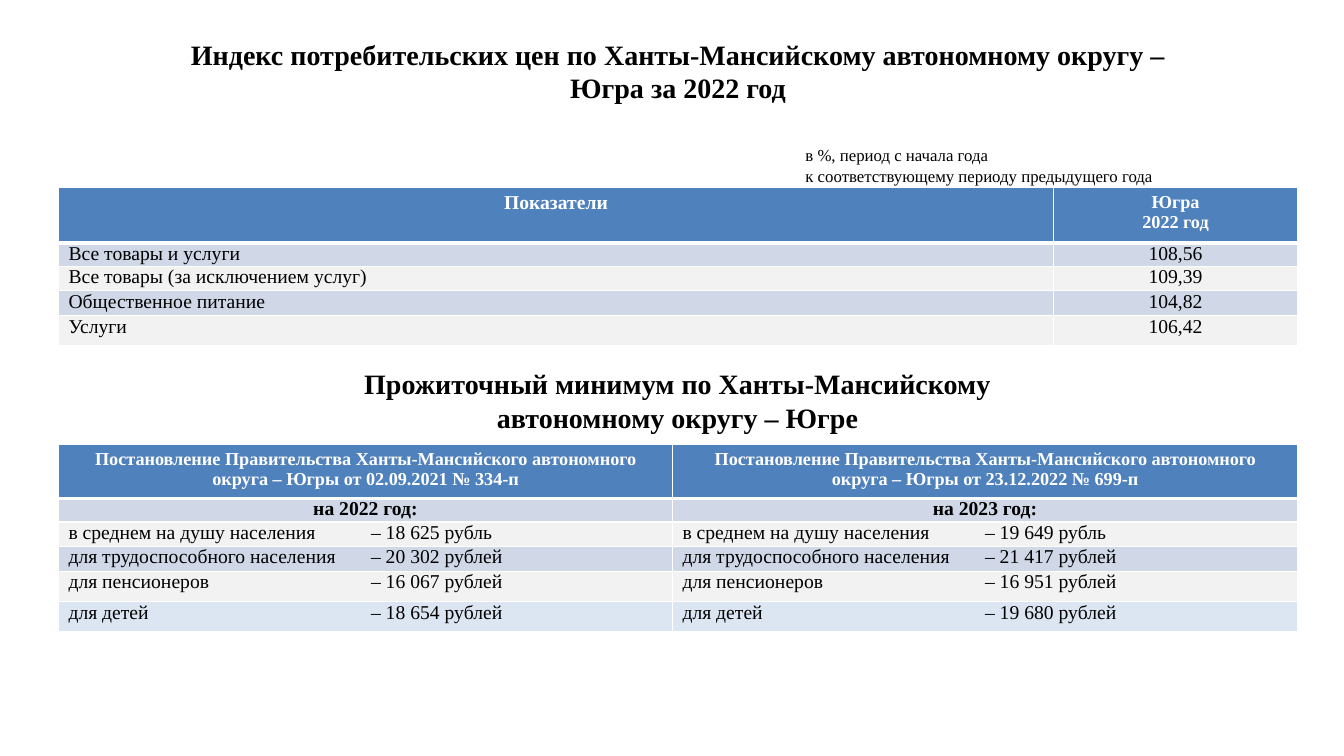
import pptx
import pptx.util
import pptx.dml.color
import pptx.enum.text
import lxml.etree
from pptx.util import Inches

FONT = "Times New Roman"
COLORS = {"text": "000000", "white": "FFFFFF", "header": "4F81BD",
          "band": "D0D8E8", "plain": "F2F2F2", "children": "DCE6F2"}
ALIGN = pptx.enum.text.PP_ALIGN
NS = "http://schemas.openxmlformats.org/drawingml/2006/main"


def rgb(name):
    return pptx.dml.color.RGBColor.from_string(COLORS[name])


def sub(parent, tag, **attrs):
    return lxml.etree.SubElement(parent, f"{{{NS}}}{tag}", attrs)


def write(tf, text, size=14, color="text", bold=False, align=ALIGN.LEFT, indent=0, tab=0):
    for i, line in enumerate(text.split("\n")):
        p = tf.add_paragraph() if i else tf.paragraphs[0]
        p.alignment = align
        pPr = p._p.get_or_add_pPr()
        if indent:
            pPr.set("indent", str(Inches(indent)))
        if tab:
            sub(sub(pPr, "tabLst"), "tab", pos=str(Inches(tab)), algn="l")
        r = p.add_run()
        r.text = line
        r.font.name = FONT
        r.font.size = pptx.util.Pt(size)
        r.font.bold = bold
        r.font.color.rgb = rgb(color)


def add_text(s, box, text, **fmt):
    tf = s.shapes.add_textbox(*map(Inches, box)).text_frame
    tf.word_wrap = True
    tf.auto_size = pptx.enum.text.MSO_AUTO_SIZE.SHAPE_TO_FIT_TEXT
    write(tf, text, **fmt)


def add_borders(cell, top, bottom):
    tcPr = cell._tc.get_or_add_tcPr()
    for side, width in (("L", 1), ("R", 1), ("T", top), ("B", bottom)):
        ln = sub(tcPr, f"ln{side}", w=str(pptx.util.Pt(width)))
        sub(sub(ln, "solidFill"), "srgbClr", val=COLORS["white"])


def fill_cell(cell, text, row, fill, **fmt):
    add_borders(cell, top=3 if row == 1 else 1, bottom=3 if row == 0 else 1)
    cell.fill.solid()
    cell.fill.fore_color.rgb = rgb(fill)
    cell.margin_left = cell.margin_right = Inches(0.1 if row else 0.13)
    cell.margin_top = cell.margin_bottom = Inches(0 if row else 0.05)
    write(cell.text_frame, text, **fmt)


def add_table(s, top, widths, heights, rows, fills, cell_format):
    table = s.shapes.add_table(len(rows), len(widths), Inches(0.58), Inches(top),
                               Inches(sum(widths)), Inches(sum(heights))).table
    for column, width in zip(table.columns, widths):
        column.width = Inches(width)
    for i, (values, height, fill) in enumerate(zip(rows, heights, fills)):
        table.rows[i].height = Inches(height)
        for j, text in enumerate(values):
            fill_cell(table.cell(i, j), text, i, fill, **cell_format(i, j))


def price_format(i, j):
    if i == 0:
        return dict(size=13 if j else 14, color="white", bold=True, align=ALIGN.CENTER)
    return dict(align=ALIGN.CENTER if j else ALIGN.JUSTIFY)


def minimum_format(i, j):
    if i == 0:
        return dict(size=13, color="white", bold=True, align=ALIGN.CENTER)
    if i == 1:
        return dict(bold=True, align=ALIGN.CENTER)
    return dict(align=ALIGN.JUSTIFY, tab=3)


def main():
    prs = pptx.Presentation()
    prs.slide_width, prs.slide_height = Inches(13.33), Inches(7.5)
    s = prs.slides.add_slide(prs.slide_layouts[6])
    title = dict(size=20, bold=True, align=ALIGN.CENTER)
    add_text(s, (0.54, 3.59, 12.36, 0.77),
             "Прожиточный минимум по Ханты-Мансийскому\nавтономному округу – Югре", **title)
    add_text(s, (1.58, 0.32, 10.29, 0.77),
             "Индекс потребительских цен по Ханты-Мансийскому автономному округу – Югра за 2022 год",
             **title)
    add_text(s, (7.4, 1.39, 5.67, 0.71),
             "в %, период с начала года\nк соответствующему периоду предыдущего года",
             size=12, indent=0.49)

    fills = ["header", "band", "plain", "band", "plain", "children"]
    prices = [("Показатели", "Югра\n2022 год"),
              ("Все товары и услуги", "108,56"),
              ("Все товары (за исключением услуг)", "109,39"),
              ("Общественное питание", "104,82"),
              ("Услуги", "106,42")]
    add_table(s, 1.86, [9.87, 2.42], [0.55, 0.23, 0.24, 0.25, 0.3],
              prices, fills, price_format)

    decree = "Постановление Правительства Ханты-Мансийского автономного округа – Югры от "
    minimums = [("в среднем на душу населения", "18 625 рубль", "19 649 рубль"),
                ("для трудоспособного населения", "20 302 рублей", "21 417 рублей"),
                ("для пенсионеров", "16 067 рублей", "16 951 рублей"),
                ("для детей", "18 654 рублей", "19 680 рублей")]
    rows = [(decree + "02.09.2021 № 334-п", decree + "23.12.2022 № 699-п"),
            ("на 2022 год:", "на 2023 год:")]
    rows += [[f"{group}\t– {amount}" for amount in amounts] for group, *amounts in minimums]
    add_table(s, 4.41, [6.09, 6.2], [0.52, 0.23, 0.24, 0.25, 0.3, 0.3],
              rows, fills, minimum_format)
    prs.save("out.pptx")


if __name__ == "__main__":
    main()
